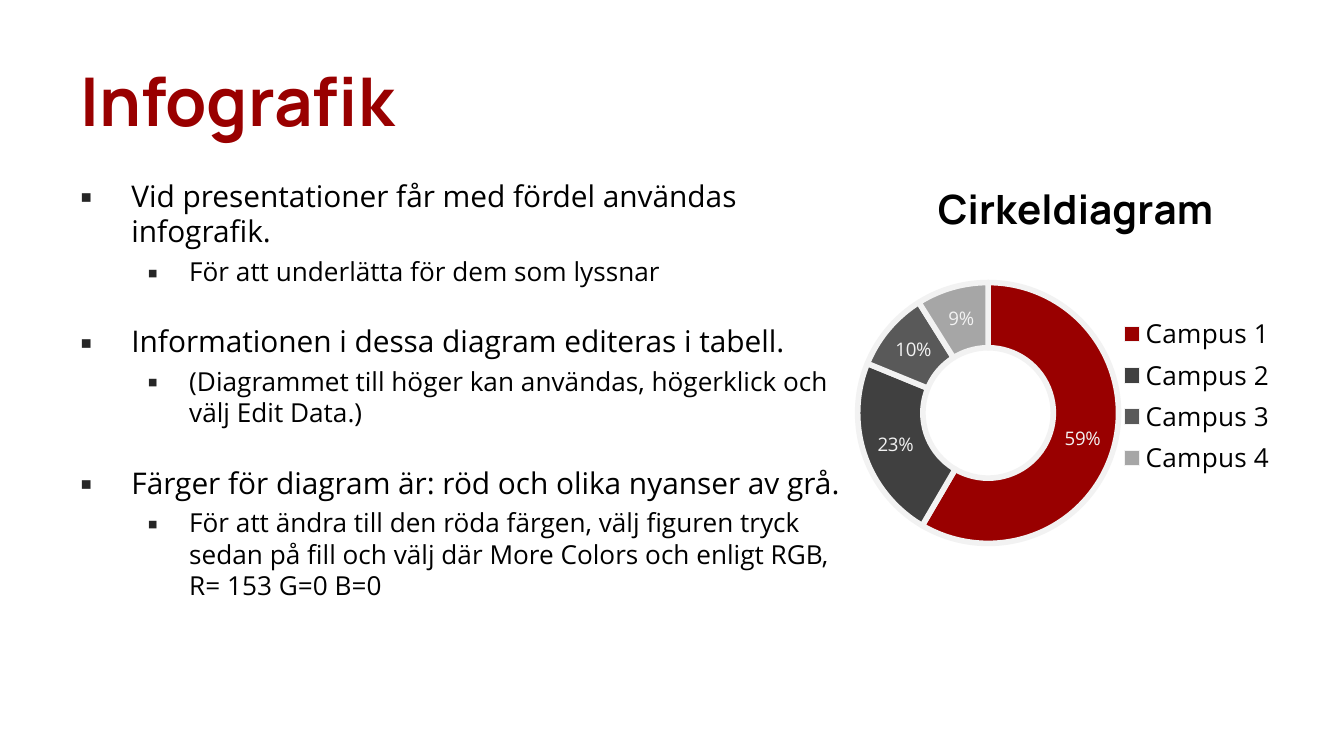
import pptx
import pptx.chart.data
import pptx.dml.color
import pptx.enum.chart
import pptx.enum.text
import pptx.oxml
import pptx.util
from pptx.util import Inches, Pt

RED = "990000"
BLACK = "000000"
PALE = "F2F2F2"
SHADES = [RED, "404040", "595959", "A6A6A6"]
TOPICS = [
    ("Vid presentationer får med fördel användas infografik.",
     "För att underlätta för dem som lyssnar"),
    ("Informationen i dessa diagram editeras i tabell.",
     "(Diagrammet till höger kan användas, högerklick och välj Edit Data.)"),
    ("Färger för diagram är: röd och olika nyanser av grå.",
     "För att ändra till den röda färgen, välj figuren tryck sedan på fill "
     "och välj där More Colors och enligt RGB, R= 153 G=0 B=0"),
]
LEVELS = [(16, 0.38, -0.38), (14, 0.81, -0.31)]


def color(text):
    """Turn a hex string into a colour."""
    return pptx.dml.color.RGBColor.from_string(text)


def style(font, name, size, shade, bold=False):
    """Set the look of a font."""
    font.name, font.size, font.bold = name, Pt(size), bold
    font.color.rgb = color(shade)


def frame(slide, box):
    """Add a wrapping text box and return its frame."""
    text = slide.shapes.add_textbox(*map(Inches, box)).text_frame
    text.word_wrap = True
    text.vertical_anchor = pptx.enum.text.MSO_ANCHOR.TOP
    return text


def bullet(para, level):
    """Indent a paragraph and give it a square bullet."""
    left, hang = LEVELS[level][1:]
    para.level = level
    props = para._p.get_or_add_pPr()
    props.set("marL", str(Inches(left)))
    props.set("indent", str(Inches(hang)))
    space = 'xmlns:a="http://schemas.openxmlformats.org/drawingml/2006/main"'
    for part in (f'<a:buClr {space}><a:srgbClr val="262626"/></a:buClr>',
                 f'<a:buFont {space} typeface="Open Sans"/>',
                 f'<a:buChar {space} char="▪"/>'):
        props.append(pptx.oxml.parse_xml(part))


def heading(slide, box):
    """Write the slide title."""
    text = frame(slide, box)
    text.text = "Infografik"
    style(text.paragraphs[0].runs[0].font, "Manrope", 36, RED, True)


def topics(slide, box):
    """Write each topic with its detail below."""
    text = frame(slide, box)
    for index, pair in enumerate(TOPICS):
        for level, words in enumerate(pair):
            first = index == 0 and level == 0
            para = text.paragraphs[0] if first else text.add_paragraph()
            para.text = words
            if not first:
                para.space_before = Pt(3.4 if level else 19.5)
            bullet(para, level)
            style(para.runs[0].font, "Open Sans", LEVELS[level][0], BLACK)


def layout(before, area, inner=False):
    """Insert a manual chart layout before an element."""
    space = 'xmlns:c="http://schemas.openxmlformats.org/drawingml/2006/chart"'
    target = '<c:layoutTarget val="inner"/>' if inner else ""
    modes = '<c:xMode val="edge"/><c:yMode val="edge"/>'
    sizes = "".join(f'<c:{key} val="{value}"/>' for key, value in zip("xywh", area))
    before.addprevious(pptx.oxml.parse_xml(
        f"<c:layout {space}><c:manualLayout>{target}{modes}{sizes}"
        "</c:manualLayout></c:layout>"))


def ring(slide, box):
    """Draw the campus doughnut chart."""
    kinds = pptx.enum.chart
    data = pptx.chart.data.CategoryChartData()
    data.categories = [f"Campus {n}" for n in range(1, 5)]
    data.add_series("Series 1", (59, 23, 10, 9))
    chart = slide.shapes.add_chart(
        kinds.XL_CHART_TYPE.DOUGHNUT, *map(Inches, box), data).chart
    style(chart.font, "Calibri", 18, BLACK)

    chart.has_title = True
    title = chart.chart_title.text_frame
    title.text = "Cirkeldiagram"
    style(title.paragraphs[0].runs[0].font, "Manrope", 21.6, BLACK, True)

    chart.has_legend = True
    legend = chart.legend
    legend.position = kinds.XL_LEGEND_POSITION.RIGHT
    legend.include_in_layout = False
    style(legend.font, "Open Sans", 14, BLACK)
    for old in legend._element.xpath("c:layout"):
        legend._element.remove(old)
    layout(legend._element.xpath("c:overlay")[0], (0.58, 0.37, 0.35, 0.4))

    plot = chart.plots[0]
    plot.vary_by_categories = True
    plot._element.xpath("c:holeSize")[0].set("val", "50")
    for old in plot._element.xpath("../c:layout"):
        old.getparent().remove(old)
    layout(plot._element, (0.04, 0.3, 0.55, 0.62), True)

    series = plot.series[0]
    for index, shade in enumerate(SHADES):
        part = series.points[index].format
        part.fill.solid()
        part.fill.fore_color.rgb = color(shade)
        part.line.color.rgb = color(PALE)
        part.line.width = Pt(3)

    labels = series.data_labels
    labels.show_value = True
    labels.number_format = '0"%"'
    labels.number_format_is_linked = False
    style(labels.font, "Open Sans", 10, PALE)


def main():
    """Build the slide and save it."""
    deck = pptx.Presentation()
    deck.slide_width = Inches(10)
    deck.slide_height = deck.slide_width * 9 // 16
    slide = deck.slides.add_slide(deck.slide_layouts[6])
    heading(slide, (0.5, 0.39, 9, 0.94))
    topics(slide, (0.5, 1.27, 6.04, 4.6))
    ring(slide, (6.24, 1.14, 3.53, 3.17))
    deck.save("out.pptx")


if __name__ == "__main__":
    main()
